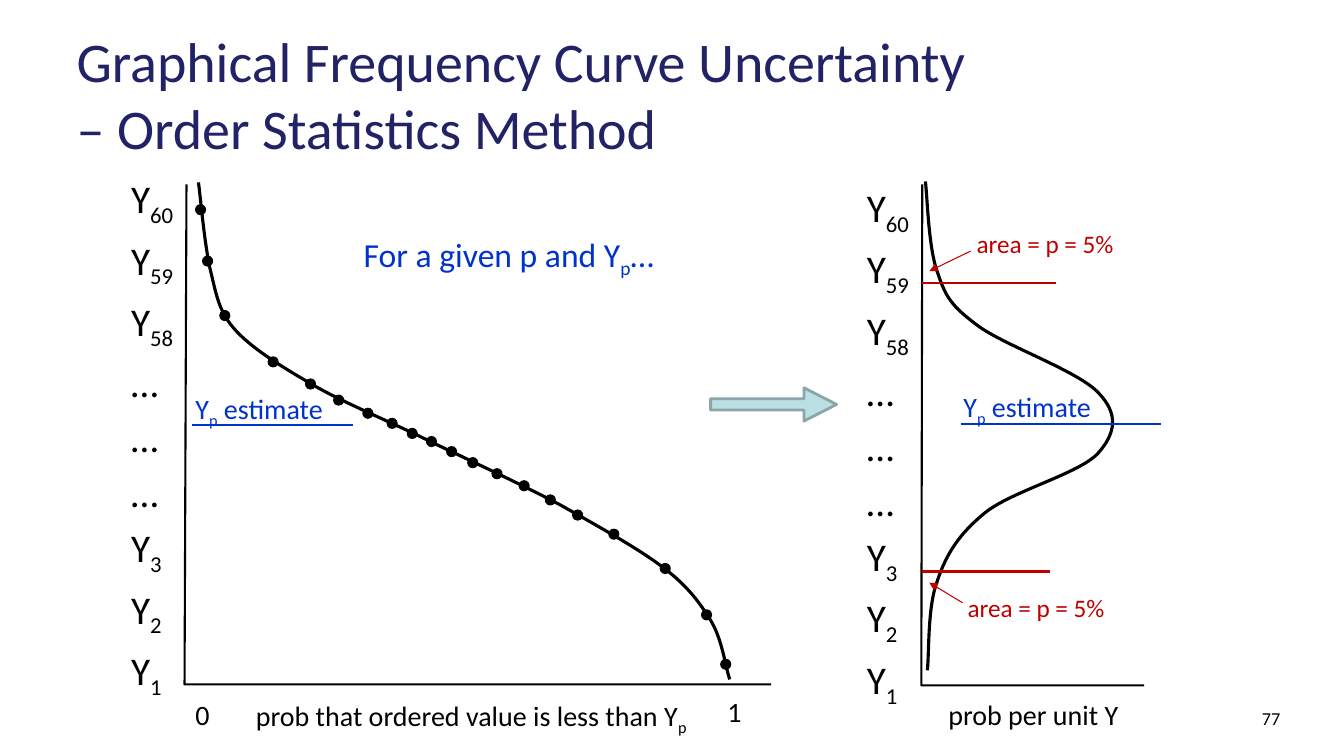
from typing import NamedTuple

from pptx import Presentation
from pptx.dml.color import RGBColor
from pptx.enum.shapes import MSO_CONNECTOR, MSO_SHAPE
from pptx.enum.text import MSO_ANCHOR, MSO_AUTO_SIZE, PP_ALIGN
from pptx.oxml.ns import qn
from pptx.oxml.xmlchemy import OxmlElement
from pptx.util import Pt

BLACK = RGBColor(0x00, 0x00, 0x00)
NAVY = RGBColor(0x22, 0x22, 0x67)
BLUE = RGBColor(0x00, 0x33, 0xCC)
RED = RGBColor(0xC0, 0x00, 0x00)
PALE_TEAL = RGBColor(0xBB, 0xE0, 0xE3)
GREY_TEAL = RGBColor(0x8A, 0xA6, 0xA8)

DOT_DIAMETER = 7.2
HANGING_INDENT = 26.6
Point = tuple[float, float]


class Box(NamedTuple):
    left: float
    top: float
    width: float
    height: float


class Label(NamedTuple):
    text: str  # "|" switches between normal text and subscript
    box: Box
    size: float
    color: RGBColor = BLACK
    alignment: PP_ALIGN = PP_ALIGN.LEFT


class Rule(NamedTuple):
    start: Point
    end: Point
    color: RGBColor
    width: float = 1.5
    arrow: bool = False


class Outline(NamedTuple):
    points: list[Point]
    width: float
    curved: bool = False


TITLE = Label("Graphical Frequency Curve Uncertainty\v– Order Statistics Method",
              Box(47.5, 21.6, 852.5, 90), 40, NAVY)
ORDERED_VALUES = ["Y|60", "Y|59", "Y|58", "…", "…", "…", "Y|3", "Y|2", "Y|1"]
SCALE_BOXES = [Box(86.4, 121, 60.5, 401.8), Box(612, 127.4, 60.5, 401.8)]

LABELS = [
    Label("prob that ordered value is less than Y|p", Box(175.7, 495.4, 328.3, 31.7), 20),
    Label("0", Box(132.5, 494.6, 26.6, 31.7), 20),
    Label("1", Box(512.6, 492.5, 26.6, 31.7), 20),
    Label("prob per unit Y", Box(670.3, 494.6, 146.9, 31.7), 20),
    Label("For a given p and Y|p|…", Box(252.7, 163.4, 224.6, 36), 24, BLUE),
    Label("area = p = 5%", Box(690.5, 159.8, 114.5, 28.8), 18, RED),
    Label("area = p = 5%", Box(684, 419.8, 114.5, 28.8), 18, RED),
    Label("Y|p| estimate", Box(681.1, 275, 127.4, 31.7), 20, BLUE),
    Label("Y|p| estimate", Box(132.5, 275.8, 127.4, 31.7), 20, BLUE),
    Label("77", Box(753.8, 501.8, 167.8, 37.4), 13, BLACK, PP_ALIGN.RIGHT),
]

RULES = [
    Rule((658.8, 202.3), (754.6, 202.3), RED),
    Rule((658.8, 408.2), (750.2, 408.2), RED),
    Rule((693.4, 179.3), (663.8, 193.7), RED, 0.75, True),
    Rule((687.6, 430.6), (663.8, 416.2), RED, 0.75, True),
    Rule((686.2, 303.1), (829.4, 303.1), BLUE),
    Rule((137.5, 303.8), (252, 303.8), BLUE),
]

# Curves list a start point, then two control points and an end per segment
OUTLINES = [
    Outline([(133.2, 131.8), (131.8, 488.9), (550.8, 488.9)], 1.5),
    Outline([(658.8, 131.8), (658.1, 489.6), (817.2, 489.6)], 1.5),
    Outline([
        (141.8, 130.3),
        (143.3, 141.1), (146.2, 175.7), (150.5, 193.7),
        (154.8, 211), (156.2, 223.2), (169.2, 236.9),
        (182.2, 250.6), (203.8, 263.5), (227.5, 277.2),
        (251.3, 290.2), (281.5, 302.4), (310.3, 316.8),
        (339.1, 330.5), (373, 346.3), (400.3, 360.7),
        (427, 375.8), (455.8, 391.7), (473.8, 405.4),
        (491.8, 419), (500.4, 431.3), (508.3, 444.2),
        (516.2, 457.9), (518.4, 477.4), (521.3, 485.3)], 2.25, True),
    Outline([
        (661, 129.6),
        (662.4, 140.4), (663.1, 177.1), (669.6, 194.4),
        (675.4, 211.7), (679, 218.2), (698.4, 232.6),
        (717.8, 247), (770.4, 265), (784.8, 280.8),
        (799.2, 295.9), (797, 309.6), (784.1, 324),
        (770.4, 338.4), (723.6, 350.6), (704.2, 365.8),
        (685.4, 380.9), (676.1, 395.3), (669.6, 414.7),
        (662.4, 433.4), (663.8, 465.8), (662.4, 478.8)], 2.25, True),
]

DOT_CENTERS = [
    (143.3, 149.8), (148.3, 186.5), (160.6, 225.4), (195.1, 258.5), (221.8, 274.3),
    (241.9, 285.8), (262.8, 295.2), (280.1, 302.4), (294.5, 309.6), (308.2, 315.4),
    (322.6, 322.6), (337.7, 330.5), (355, 338.4), (374.4, 347), (393.1, 357.1),
    (412.6, 367.9), (438.5, 381.6), (475.2, 406.1), (504.7, 439.2), (518.4, 474.5),
]


def set_attributes(target, values: dict) -> None:
    for name, value in values.items():
        setattr(target, name, value)


def place(shape, box: Box) -> None:
    set_attributes(shape, {name: Pt(value) for name, value in box._asdict().items()})


def prepare_frame(text_frame, anchor: MSO_ANCHOR = MSO_ANCHOR.TOP) -> None:
    set_attributes(text_frame, {
        "word_wrap": True, "auto_size": MSO_AUTO_SIZE.NONE, "vertical_anchor": anchor,
        "margin_left": Pt(7.2), "margin_right": Pt(7.2),
        "margin_top": Pt(3.6), "margin_bottom": Pt(3.6)})


def style_font(font, size: float, color: RGBColor) -> None:
    set_attributes(font, {"name": "Calibri", "size": Pt(size)})
    font.color.rgb = color


def write_runs(paragraph, text: str, size: float, color: RGBColor) -> None:
    for index, piece in enumerate(text.split("|")):
        run = paragraph.add_run()
        run.text = piece
        style_font(run.font, size, color)
        if index % 2:
            run._r.get_or_add_rPr().set("baseline", "-25000")


def write_title(shape) -> None:
    place(shape, TITLE.box)
    prepare_frame(shape.text_frame, MSO_ANCHOR.MIDDLE)
    paragraph = shape.text_frame.paragraphs[0]
    paragraph.text = TITLE.text
    paragraph.alignment = TITLE.alignment
    for run in paragraph.runs:
        style_font(run.font, TITLE.size, TITLE.color)


def write_scale(shape, box: Box) -> None:
    place(shape, box)
    text_frame = shape.text_frame
    prepare_frame(text_frame)
    for index, value in enumerate(ORDERED_VALUES):
        paragraph = text_frame.add_paragraph() if index else text_frame.paragraphs[0]
        paragraph.space_before = Pt(5.6)
        properties = paragraph._p.get_or_add_pPr()
        properties.set("marL", str(Pt(HANGING_INDENT)))
        properties.set("indent", str(-Pt(HANGING_INDENT)))
        properties.append(OxmlElement("a:buNone"))
        write_runs(paragraph, value, 28, BLACK)


def draw_label(slide, label: Label) -> None:
    shape = slide.shapes.add_textbox(*map(Pt, label.box))
    prepare_frame(shape.text_frame)
    paragraph = shape.text_frame.paragraphs[0]
    paragraph.alignment = label.alignment
    write_runs(paragraph, label.text, label.size, label.color)


def style_line(line, color: RGBColor, width: float) -> None:
    line.color.rgb = color
    line.width = Pt(width)


def draw_rule(slide, rule: Rule) -> None:
    connector = slide.shapes.add_connector(MSO_CONNECTOR.STRAIGHT, *map(Pt, rule.start + rule.end))
    style_line(connector.line, rule.color, rule.width)
    if rule.arrow:
        arrowhead = OxmlElement("a:tailEnd")
        arrowhead.set("type", "triangle")
        connector.line._get_or_add_ln().append(arrowhead)
    connector._element.spPr.append(OxmlElement("a:effectLst"))


def draw_outline(slide, outline: Outline) -> None:
    start, *rest = [(Pt(x), Pt(y)) for x, y in outline.points]
    builder = slide.shapes.build_freeform(*start)
    builder.add_line_segments(rest, close=False)
    shape = builder.convert_to_shape()
    shape.shadow.inherit = False
    shape.fill.background()
    style_line(shape.line, BLACK, outline.width)
    if outline.curved:
        # Merge each three straight steps into one Bézier segment
        steps = list(shape._element.iter(qn("a:lnTo")))
        for index in range(0, len(steps), 3):
            segment = OxmlElement("a:cubicBezTo")
            steps[index].addprevious(segment)
            for step in steps[index:index + 3]:
                segment.append(step[0])
                step.getparent().remove(step)


def draw_preset(slide, kind: MSO_SHAPE, box: Box, fill: RGBColor, line: RGBColor, width: float):
    shape = slide.shapes.add_shape(kind, *map(Pt, box))
    shape.shadow.inherit = False
    shape.fill.solid()
    shape.fill.fore_color.rgb = fill
    style_line(shape.line, line, width)
    return shape


def main() -> None:
    presentation = Presentation()
    set_attributes(presentation, {"slide_width": Pt(960), "slide_height": Pt(540)})
    slide = presentation.slides.add_slide(presentation.slide_layouts[3])

    # Title and the two columns of ordered values
    title, *scales = slide.placeholders
    write_title(title)
    for scale, box in zip(scales, SCALE_BOXES):
        write_scale(scale, box)

    # Axes, curves and plotted values
    for outline in OUTLINES:
        draw_outline(slide, outline)
    for x, y in DOT_CENTERS:
        radius = DOT_DIAMETER / 2
        box = Box(x - radius, y - radius, DOT_DIAMETER, DOT_DIAMETER)
        draw_preset(slide, MSO_SHAPE.OVAL, box, BLACK, BLACK, 0.75)

    # Annotations
    for rule in RULES:
        draw_rule(slide, rule)
    for label in LABELS:
        draw_label(slide, label)

    # Arrow between the diagrams
    arrow = draw_preset(slide, MSO_SHAPE.RIGHT_ARROW, Box(507.6, 277, 90, 23.8),
                        PALE_TEAL, GREY_TEAL, 2)
    arrow.adjustments[0], arrow.adjustments[1] = 0.34, 0.98

    presentation.save("out.pptx")


if __name__ == "__main__":
    main()
